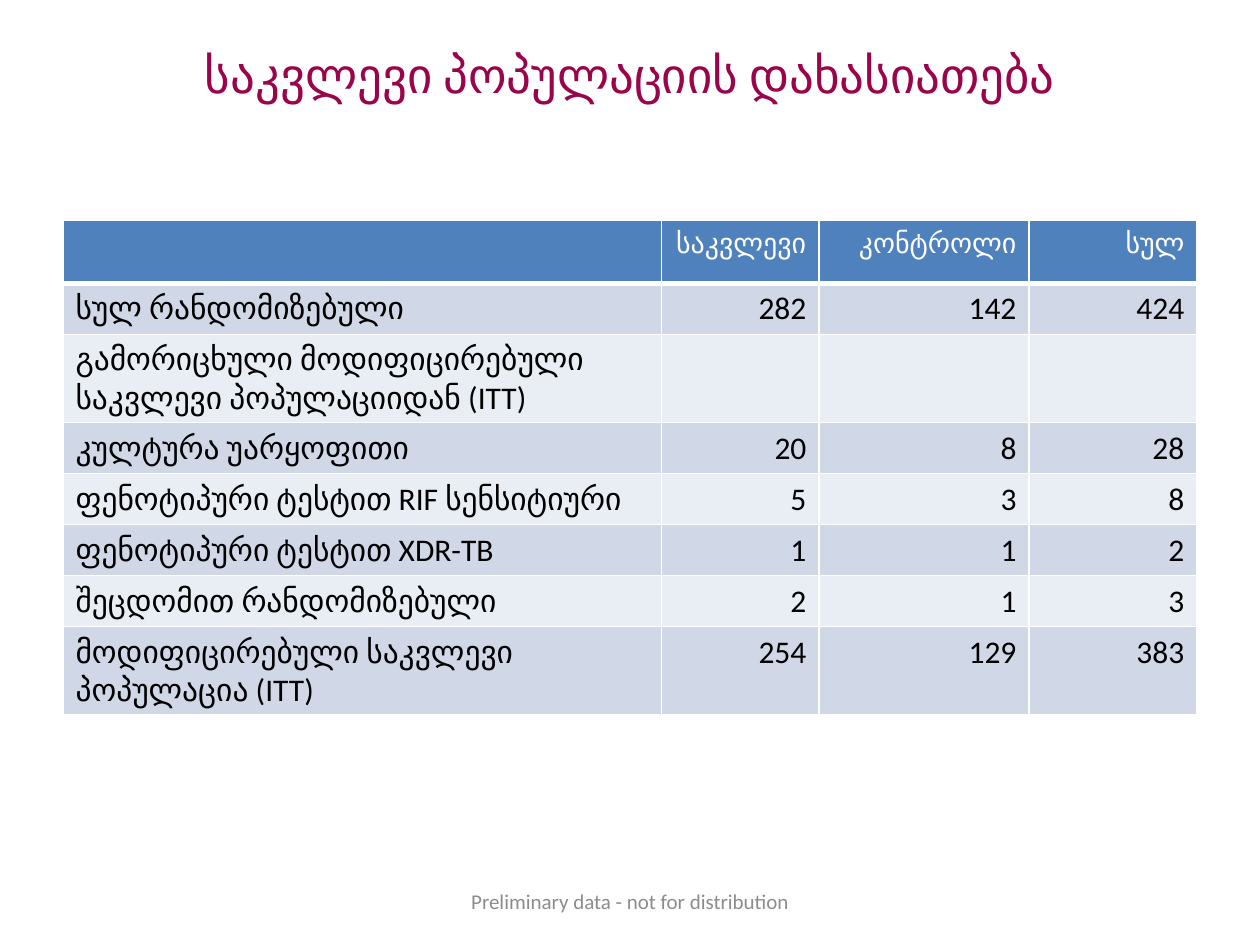
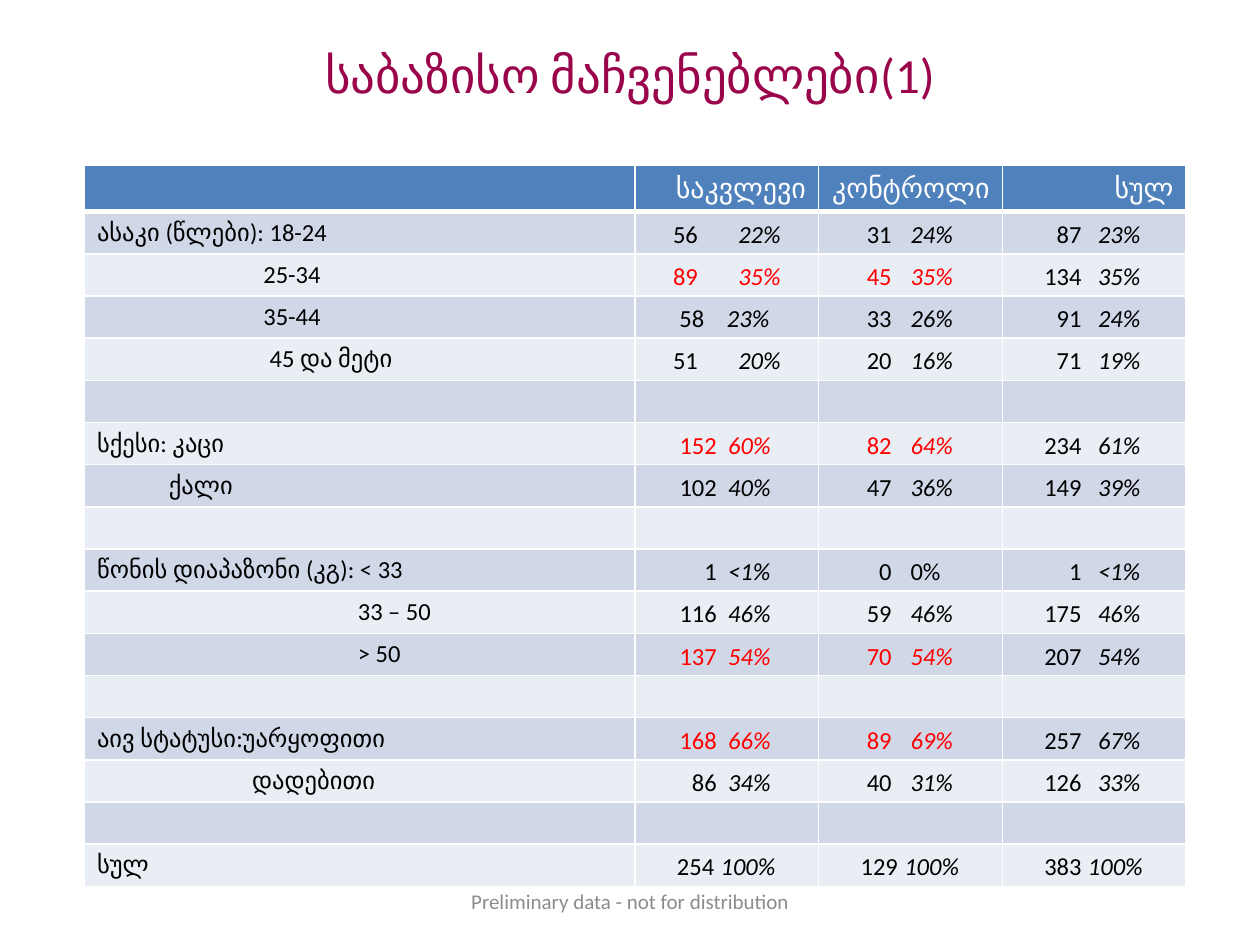
from lxml import etree
from pptx import Presentation
from pptx.dml.color import RGBColor
from pptx.enum.text import MSO_ANCHOR, PP_ALIGN
from pptx.oxml.ns import qn
from pptx.util import Inches, Pt

LEFT, CENTER, RIGHT = PP_ALIGN.LEFT, PP_ALIGN.CENTER, PP_ALIGN.RIGHT
TOP, MIDDLE = MSO_ANCHOR.TOP, MSO_ANCHOR.MIDDLE

SLIDE_WIDTH, SLIDE_HEIGHT = 10, 7.5
UNIT = SLIDE_WIDTH / 40
FONT = "Calibri"
BERRY, GRAY, WHITE, BLACK, RED = "9A044B", "8C8C8C", "FFFFFF", "000000", "FF0000"
HEADER_FILL, BAND_FILLS = "4F81BD", ("D0D8E8", "E9EDF4")
FOOTER = "Preliminary data - not for distribution"
HEADINGS = ("", "საკვლევი", "კონტროლი", "სულ")

POPULATION = [
    ("სულ რანდომიზებული", "282", "142", "424"),
    ("გამორიცხული მოდიფიცირებული საკვლევი პოპულაციიდან (ITT)", "", "", ""),
    ("კულტურა უარყოფითი", "20", "8", "28"),
    ("ფენოტიპური ტესტით RIF სენსიტიური", "5", "3", "8"),
    ("ფენოტიპური ტესტით XDR-TB", "1", "1", "2"),
    ("შეცდომით რანდომიზებული", "2", "1", "3"),
    ("მოდიფიცირებული საკვლევი პოპულაცია (ITT)", "254", "129", "383"),
]

BLANK_ROW = ("", 0, "", "", "")
BASELINE = [
    ("ასაკი (წლები): 18-24", 0, "56 22%", "31 24%", "87 23%"),
    ("25-34", 1.32, "89 35%", "45 35%", "134 35%"),
    ("35-44", 1.32, "58 23%", "33 26%", "91 24%"),
    ("45 და მეტი", 1.37, "51 20%", "20 16%", "71 19%"),
    BLANK_ROW,
    ("სქესი: კაცი", 0, "152 60%", "82 64%", "234 61%"),
    ("ქალი", 0.57, "102 40%", "47 36%", "149 39%"),
    BLANK_ROW,
    ("წონის დიაპაზონი (კგ): < 33", 0, "1 <1%", "0 0%", "1 <1%"),
    ("33 – 50", 2.07, "116 46%", "59 46%", "175 46%"),
    ("> 50", 2.07, "137 54%", "70 54%", "207 54%"),
    BLANK_ROW,
    ("აივ სტატუსი:უარყოფითი", 0, "168 66%", "89 69%", "257 67%"),
    ("დადებითი", 1.23, "86 34%", "40 31%", "126 33%"),
    BLANK_ROW,
    ("სულ", 0, "254 100%", "129 100%", "383 100%"),
]
HIGHLIGHTED = {"25-34", "სქესი: კაცი", "> 50", "აივ სტატუსი:უარყოფითი"}
COLUMN_TABS = {1: (0.58, 0.67), 2: (0.51, 0.66), 3: (0.56, 0.69)}
WIDE_TABS, MEDIUM_TABS, TOTAL_TABS = (0.43, 0.75), (0.48, 0.66), (0.56, 0.61)
SPECIAL_TABS = {"56": WIDE_TABS, "89": WIDE_TABS, "51": WIDE_TABS, "58": MEDIUM_TABS}


def grid(units):
    return Inches(units * UNIT)


def color(hex_value):
    return RGBColor.from_string(hex_value)


def add_span(para, text, size, hex_value, italic=False):
    span = para.add_run()
    span.text = text
    span.font.name = FONT
    span.font.size = Pt(size)
    span.font.bold = False
    span.font.italic = italic
    span.font.color.rgb = color(hex_value)


def add_text(page, area, text, size, hex_value, anchor):
    box = page.shapes.add_textbox(*map(grid, area))
    frame = box.text_frame
    frame.word_wrap = True
    frame.vertical_anchor = anchor
    para = frame.paragraphs[0]
    para.alignment = CENTER
    add_span(para, text, size, hex_value)


def add_page(deck, title):
    page = deck.slides.add_slide(deck.slide_layouts[6])
    add_text(page, (2, 1.2, 36, 5), title, 28, BERRY, TOP)
    return page


def add_footer(page):
    add_text(page, (13.67, 27.8, 12.67, 1.6), FOOTER, 12, GRAY, MIDDLE)


def style_cell(cell, fill, bottom_width):
    properties = cell._tc.get_or_add_tcPr()
    for side in "LRTB":
        width = bottom_width if side == "B" else 1
        line = etree.SubElement(properties, qn(f"a:ln{side}"), w=str(Pt(width)))
        paint = etree.SubElement(line, qn("a:solidFill"))
        etree.SubElement(paint, qn("a:srgbClr"), val=WHITE)
    cell.fill.solid()
    cell.fill.fore_color.rgb = color(fill)


def write_cell(cell, text, size, hex_value, alignment=LEFT, indent=0):
    para = cell.text_frame.paragraphs[0]
    para.alignment = alignment
    if text:
        add_span(para, text, size, hex_value)
    else:
        etree.SubElement(para._p, qn("a:endParaRPr"), sz=str(size * 100))
    if indent:
        para._p.get_or_add_pPr().set("marL", str(Inches(indent)))


def write_count_and_share(cell, text, tabs, hex_value):
    cell.margin_left = cell.margin_right = Inches(0.07)
    cell.margin_top = cell.margin_bottom = 0
    cell.vertical_anchor = MIDDLE
    para = cell.text_frame.paragraphs[0]
    para.alignment = LEFT
    para.line_spacing = 1.15
    stops = etree.SubElement(para._p.get_or_add_pPr(), qn("a:tabLst"))
    for position, side in zip(tabs, "rl"):
        etree.SubElement(stops, qn("a:tab"), pos=str(Inches(position)), algn=side)
    count, share = text.split()
    add_span(para, f"\t{count}\t", 14, hex_value)
    add_span(para, share, 14, hex_value, italic=share != "0%")


def add_banded_table(page, left, top, widths, header_height, row_height, row_count):
    heights = [header_height] + [row_height] * row_count
    area = map(grid, (left, top, sum(widths), sum(heights)))
    table = page.shapes.add_table(len(heights), len(widths), *area).table
    table.first_row = table.horz_banding = False
    for column, width in zip(table.columns, widths):
        column.width = grid(width)
    for index, (row, height) in enumerate(zip(table.rows, heights)):
        row.height = grid(height)
        fill = BAND_FILLS[(index - 1) % 2] if index else HEADER_FILL
        for cell in row.cells:
            style_cell(cell, fill, 1 if index else 3)
    for cell, heading in zip(table.rows[0].cells, HEADINGS):
        write_cell(cell, heading, 16, WHITE, RIGHT)
    return table


def add_population_page(deck):
    page = add_page(deck, "საკვლევი პოპულაციის დახასიათება")
    table = add_banded_table(page, 2, 7, (19, 5, 6.67, 5.33), 2, 1.62, len(POPULATION))
    for row, values in enumerate(POPULATION, 1):
        for column, value in enumerate(values):
            alignment = RIGHT if column else LEFT
            write_cell(table.cell(row, column), value, 18, BLACK, alignment)
    add_footer(page)


def add_baseline_page(deck):
    page = add_page(deck, "საბაზისო მაჩვენებლები(1)")
    widths = (17.48, 5.83, 5.83, 5.83)
    table = add_banded_table(page, 2.68, 5.25, widths, 1.33, 1.34, len(BASELINE))
    for row, (label, indent, *values) in enumerate(BASELINE, 1):
        write_cell(table.cell(row, 0), label, 14, BLACK, indent=indent)
        for column, value in enumerate(values, 1):
            cell = table.cell(row, column)
            if not value:
                write_cell(cell, "", 14, BLACK)
                continue
            tabs = COLUMN_TABS[column]
            if row == len(BASELINE):
                tabs = TOTAL_TABS
            elif column == 1:
                tabs = SPECIAL_TABS.get(value.split()[0], tabs)
            marked = label in HIGHLIGHTED and column < 3
            write_count_and_share(cell, value, tabs, RED if marked else BLACK)
    add_footer(page)


def main():
    deck = Presentation()
    deck.slide_width = Inches(SLIDE_WIDTH)
    deck.slide_height = Inches(SLIDE_HEIGHT)
    add_population_page(deck)
    add_baseline_page(deck)
    deck.save("out.pptx")


if __name__ == "__main__":
    main()
